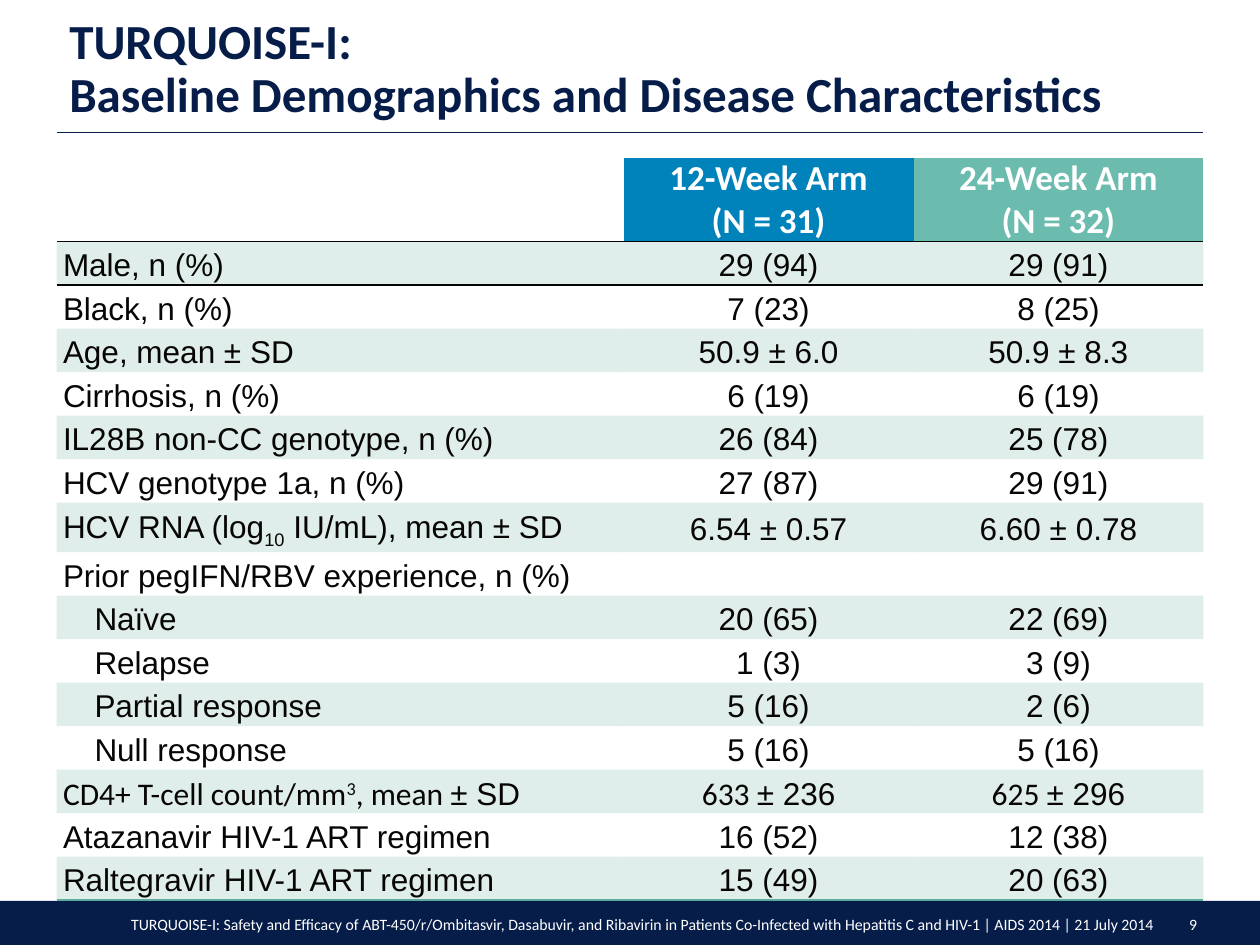
from lxml.etree import SubElement
from pptx import Presentation
from pptx.dml.color import RGBColor
from pptx.enum.shapes import MSO_CONNECTOR, MSO_SHAPE
from pptx.enum.text import MSO_ANCHOR, PP_ALIGN
from pptx.oxml.ns import qn
from pptx.util import Inches, Pt

COLORS = {"navy": "071D49", "white": "FFFFFF", "ink": "070605",
          "blue": "0082BA", "mint": "6BBBAE", "band": "60A99D"}
PLAIN = "{2D5ABB26-0587-4C30-8999-92F81FD0307C}"
LEFT, RIGHT, CENTER = PP_ALIGN.LEFT, PP_ALIGN.RIGHT, PP_ALIGN.CENTER

TITLE = ["TURQUOISE-I:", "Baseline Demographics and Disease Characteristics"]
FOOTER = ("TURQUOISE-I: Safety and Efficacy of ABT-450/r/Ombitasvir, Dasabuvir, and Ribavirin "
          "in Patients Co-Infected with Hepatitis C and HIV-1 | AIDS 2014 | 21 July 2014")
ARMS = [("12-Week Arm", "(N = 31)", "blue"), ("24-Week Arm", "(N = 32)", "mint")]
RNA = [("HCV RNA (log", "Arial", 0), ("10", "Arial", -25000),
       (" IU/mL), mean ± SD", "Arial", 0)]
CELLS = [("CD4+ T-cell count/mm", "Calibri", 0), ("3", "Calibri", 30000),
         (", mean ", "Calibri", 0), ("± SD", "Arial", 0)]
ROWS = [
    ("Male, n (%)", "29 (94)", "29 (91)"),
    ("Black, n (%)", "7 (23)", "8 (25)"),
    ("Age, mean ± SD", "50.9 ± 6.0", "50.9 ± 8.3"),
    ("Cirrhosis, n (%)", "6 (19)", "6 (19)"),
    ("IL28B non-CC genotype, n (%)", "26 (84)", "25 (78)"),
    ("HCV genotype 1a, n (%)", "27 (87)", "29 (91)"),
    (RNA, "6.54 ± 0.57", "6.60 ± 0.78"),
    ("Prior pegIFN/RBV experience, n (%)", "", ""),
    ("Naïve", "20 (65)", "22 (69)"),
    ("Relapse", "1 (3)", "3 (9)"),
    ("Partial response", "5 (16)", "2 (6)"),
    ("Null response", "5 (16)", "5 (16)"),
    (CELLS, [("633 ", "Calibri", 0), ("± 236", "Arial", 0)],
     [("625 ", "Calibri", 0), ("± 296", "Arial", 0)]),
    ("Atazanavir HIV-1 ART regimen", "16 (52)", "12 (38)"),
    ("Raltegravir HIV-1 ART regimen", "15 (49)", "20 (63)"),
]
NESTED = ("Naïve", "Relapse", "Partial response", "Null response")


class Deck:
    def __init__(self):
        self.deck = Presentation()
        self.deck.slide_width, self.deck.slide_height = Inches(10), Inches(7.5)
        self.slide = self.deck.slides.add_slide(self.deck.slide_layouts[5])
        self.shapes = self.slide.shapes

    def color(self, name):
        return RGBColor.from_string(COLORS[name])

    def run(self, para, text, size, color, font="Calibri", bold=False, base=0):
        run = para.add_run()
        run.text = text
        run.font.size, run.font.name, run.font.bold = Pt(size), font, bold
        run.font.color.rgb = self.color(color)
        if base:
            run.font._element.set("baseline", str(base))

    def title(self, lines, x, y, w, h):
        box = self.shapes.title
        box.left, box.top, box.width, box.height = map(Inches, (x, y, w, h))
        box.text_frame.vertical_anchor = MSO_ANCHOR.BOTTOM
        para = box.text_frame.paragraphs[0]
        para.alignment, para.line_spacing = LEFT, 0.9
        for i, line in enumerate(lines):
            if i:
                para.add_line_break()
            self.run(para, line, 28, "navy", bold=True)

    def bar(self, x, y, w, h):
        bar = self.shapes.add_shape(MSO_SHAPE.RECTANGLE, *map(Inches, (x, y, w, h)))
        bar.shadow.inherit = False
        bar.fill.solid()
        bar.fill.fore_color.rgb = self.color("navy")
        bar.line.fill.background()

    def rule(self, x, y, end):
        rule = self.shapes.add_connector(
            MSO_CONNECTOR.STRAIGHT, *map(Inches, (x, y, end, y)))
        rule.line.color.rgb, rule.line.width = self.color("navy"), Pt(0.75)
        SubElement(rule._element.spPr, qn("a:effectLst"))

    def note(self, text, x, y, w, h, align):
        frame = self.shapes.add_textbox(*map(Inches, (x, y, w, h))).text_frame
        frame.word_wrap = True
        para = frame.paragraphs[0]
        para.alignment, para.line_spacing = align, 0.9
        self.run(para, text, 9, "white")

    def border(self, cell, side, color):
        props = cell._tc.get_or_add_tcPr()
        line = props.makeelement(qn("a:" + side), {"w": str(Pt(1))})
        fill = SubElement(line, qn("a:solidFill"))
        SubElement(fill, qn("a:srgbClr"), val=COLORS[color])
        props.insert(0, line)

    def paint(self, cell, color, alpha=None):
        if not color:
            cell.fill.background()
            return
        cell.fill.solid()
        cell.fill.fore_color.rgb = self.color(color)
        if alpha:
            tone = cell._tc.tcPr.find(".//" + qn("a:srgbClr"))
            SubElement(tone, qn("a:alpha"), val=str(alpha * 1000))

    def pad(self, cell, side, anchor):
        cell.margin_left = cell.margin_right = Inches(side)
        cell.margin_top = cell.margin_bottom = 0
        cell.vertical_anchor = anchor

    def head(self, cell, lines, color):
        self.pad(cell, 0.07, MSO_ANCHOR.BOTTOM)
        self.paint(cell, color)
        self.border(cell, "lnB", "ink")
        for i, line in enumerate(lines):
            para = cell.text_frame.add_paragraph() if i else cell.text_frame.paragraphs[0]
            para.alignment = CENTER
            self.run(para, line, 20, "white", bold=True)

    def cell(self, cell, text, align, band):
        self.pad(cell, 0.05, MSO_ANCHOR.MIDDLE)
        self.paint(cell, "band" if band else None, 20)
        para = cell.text_frame.paragraphs[0]
        para.alignment, para.line_spacing = align, 1.15
        if text in NESTED:
            para._p.get_or_add_pPr().set("indent", str(Inches(0.25)))
        if not text:
            return
        parts = [(text, "Arial", 0)] if isinstance(text, str) else text
        for part, font, base in parts:
            self.run(para, part, 18, "ink", font, base=base)

    def table(self, arms, rows, x, y, widths, heights):
        grid = self.shapes.add_table(
            len(heights), len(widths),
            *map(Inches, (x, y, sum(widths), sum(heights)))).table
        grid._tbl.tblPr.find(qn("a:tableStyleId")).text = PLAIN
        for col, width in zip(grid.columns, widths):
            col.width = Inches(width)
        for row, height in zip(grid.rows, heights):
            row.height = Inches(height)
        self.head(grid.cell(0, 0), [], None)
        for c, (name, size, color) in enumerate(arms, 1):
            self.head(grid.cell(0, c), [name, size], color)
        for r, row in enumerate(rows, 1):
            for c, text in enumerate(row):
                cell = grid.cell(r, c)
                self.cell(cell, text, CENTER if c else LEFT, r % 2)
                if r == 1:
                    self.border(cell, "lnB", "ink")
                    self.border(cell, "lnT", "ink")
                elif r == len(rows):
                    self.border(cell, "lnB", "band")

    def save(self):
        self.deck.save("out.pptx")


def main():
    deck = Deck()
    deck.bar(0, 7.15, 10, 0.35)
    deck.rule(0.45, 1.05, 9.55)
    deck.note(FOOTER, 0.45, 7.23, 8.8, 0.24, RIGHT)
    deck.note("9", 9.28, 7.23, 0.38, 0.2, CENTER)
    deck.title(TITLE, 0.45, 0.25, 9.1, 0.78)
    body = 4.83 / 14
    deck.table(ARMS, ROWS, 0.45, 1.25, [4.5, 2.3, 2.3], [0.59] + [body] * 14 + [0.21])
    deck.save()


if __name__ == "__main__":
    main()
